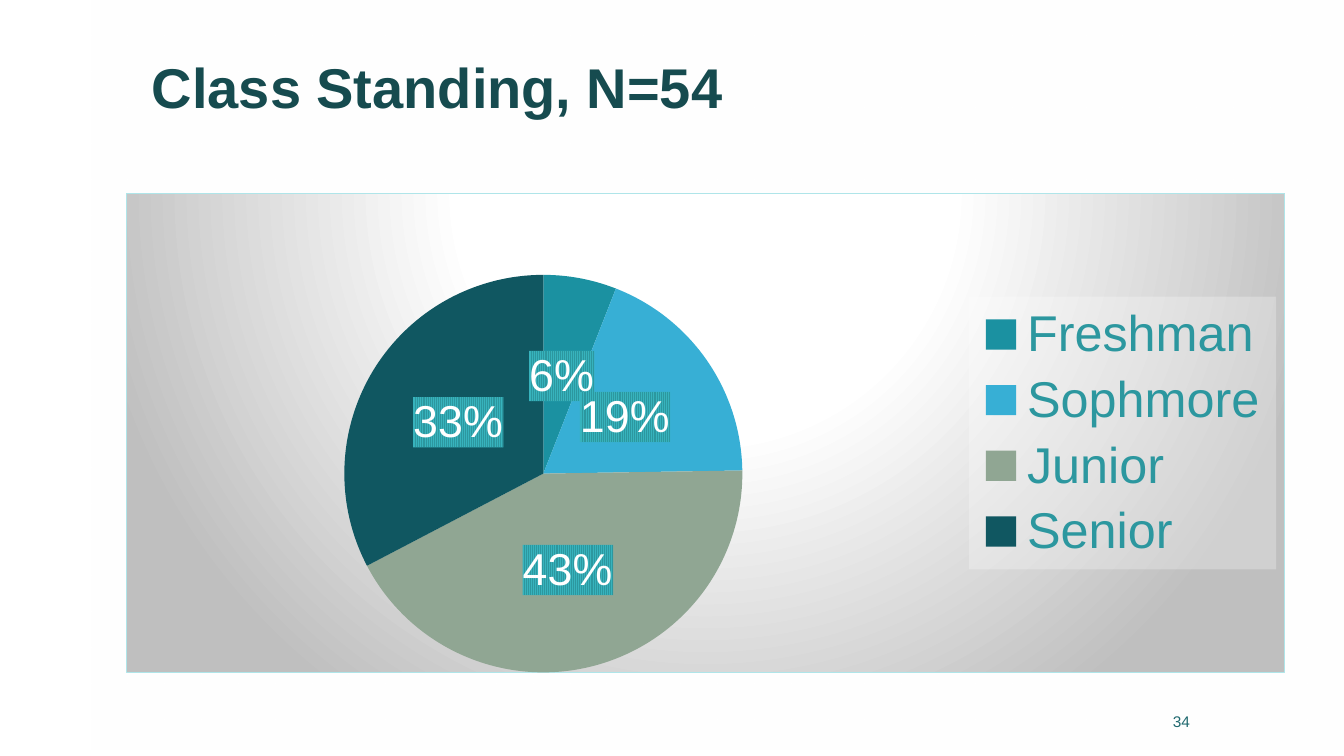
from lxml import etree
from pptx import Presentation
from pptx import util as u
from pptx.chart.data import CategoryChartData
from pptx.dml.color import RGBColor
from pptx.enum import chart as ch, shapes, text
from pptx.oxml import parse_xml
from pptx.oxml.ns import nsdecls, qn

PX = 914400 / 100.8
FONT = "Arial"
WHITE = RGBColor(0xFF, 0xFF, 0xFF)
SILVER = RGBColor(0xBF, 0xBF, 0xBF)
DARK_TEAL = RGBColor(0x16, 0x4B, 0x4F)
NUMBER_TEAL = RGBColor(0x1F, 0x69, 0x6F)
LEGEND_TEAL = RGBColor(0x2C, 0x97, 0x9F)
LABEL_DARK = RGBColor(0x2C, 0x97, 0x9F)
LABEL_LIGHT = RGBColor(0x37, 0xB3, 0xBD)
PALE_TEAL = RGBColor(0xAF, 0xE5, 0xE9)

STANDINGS = [
    ("Freshman", 6, RGBColor(0x1B, 0x91, 0xA1)),
    ("Sophmore", 19, RGBColor(0x37, 0xAF, 0xD5)),
    ("Junior", 43, RGBColor(0x90, 0xA6, 0x93)),
    ("Senior", 33, RGBColor(0x10, 0x57, 0x61)),
]


def px(n):
    return u.Emu(round(n * PX))


def color_xml(color, opacity=100):
    return f'<a:srgbClr val="{color}"><a:alpha val="{opacity * 1000}"/></a:srgbClr>'


def gradient_xml(stops, direction):
    """Stops are (position, colour, opacity), all in percent."""
    marks = "".join(f'<a:gs pos="{at * 1000}">{color_xml(color, opacity)}</a:gs>'
                    for at, color, opacity in stops)
    return f'<a:gradFill {nsdecls("a")}><a:gsLst>{marks}</a:gsLst>{direction}</a:gradFill>'


def set_format(target, values):
    for name, value in values.items():
        if name == "color":
            target.color.rgb = value
        else:
            setattr(target, name, value)


class Deck:
    def __init__(self, width, height):
        self.prs = Presentation()
        self.prs.slide_width, self.prs.slide_height = px(width), px(height)
        self.slide = self.prs.slides.add_slide(self.prs.slide_layouts[6])

    def font(self, target, size, color, bold=False):
        set_format(target, {"name": FONT, "size": u.Pt(size), "bold": bold, "color": color})

    def veil(self, box):
        """White rectangle that fades in opacity from top to bottom."""
        veil = self.slide.shapes.add_shape(shapes.MSO_SHAPE.RECTANGLE, *map(px, box))
        veil.shadow.inherit = False
        veil.line.fill.background()
        fade = gradient_xml([(0, WHITE, 60), (100, WHITE, 0)], '<a:lin ang="5400000" scaled="0"/>')
        veil._element.spPr.find(qn("a:prstGeom")).addnext(parse_xml(fade))

    def text(self, box, words, size, color, frame, paragraph, bold=False):
        text_frame = self.slide.shapes.add_textbox(*map(px, box)).text_frame
        set_format(text_frame, {"word_wrap": True, **frame})
        line = text_frame.paragraphs[0]
        set_format(line, paragraph)
        run = line.add_run()
        run.text = words
        self.font(run.font, size, color, bold)

    def backdrop(self, part, fill, line=""):
        """Give a chart part, whose font is already set, a fill and a border."""
        part.find(qn("c:txPr")).addprevious(
            parse_xml(f'<c:spPr {nsdecls("c", "a")}>{fill}{line}</c:spPr>'))

    def pie(self, box, rows, plot_box):
        data = CategoryChartData(number_format="General")
        data.categories = [name for name, _, _ in rows]
        data.add_series("Series 1", [value for _, value, _ in rows])
        chart = self.slide.shapes.add_chart(
            ch.XL_CHART_TYPE.PIE, *map(px, box), data).chart
        set_format(chart, {"has_title": False, "has_legend": True})
        self.font(chart.font, 10, DARK_TEAL)
        glow = gradient_xml(
            [(0, WHITE, 100), (39, WHITE, 100), (100, SILVER, 100)],
            '<a:path path="circle"><a:fillToRect l="50000" t="-80000" r="50000" b="180000"/></a:path>')
        border = f'<a:ln w="9525"><a:solidFill>{color_xml(PALE_TEAL)}</a:solidFill></a:ln>'
        self.backdrop(chart._chartSpace, glow, border)

        set_format(chart.legend, {"position": ch.XL_LEGEND_POSITION.RIGHT,
                                  "include_in_layout": False})
        self.font(chart.legend.font, 36, LEGEND_TEAL)
        self.backdrop(chart.legend._element,
                      f"<a:solidFill>{color_xml(WHITE, 27)}</a:solidFill>")

        plot = chart.plots[0]
        plot.vary_by_categories = True
        for i, (_, _, color) in enumerate(rows):
            slice_format = plot.series[0].points[i].format
            slice_format.fill.solid()
            slice_format.fill.fore_color.rgb = color
            slice_format.line.fill.background()
        plot.has_data_labels = True
        labels = plot.data_labels
        set_format(labels, {"show_percentage": True, "show_value": False,
                            "number_format": "0%", "number_format_is_linked": False,
                            "position": ch.XL_LABEL_POSITION.CENTER})
        self.font(labels.font, 32, WHITE)
        self.backdrop(labels._element,
                      f'<a:pattFill prst="narVert"><a:fgClr>{color_xml(LABEL_DARK)}</a:fgClr>'
                      f"<a:bgClr>{color_xml(LABEL_LIGHT)}</a:bgClr></a:pattFill>")
        self.place_plot(chart, plot_box)

    def place_plot(self, chart, plot_box):
        """Fix the inner plot area, given as fractions of the chart."""
        area = chart._chartSpace.find(f'{qn("c:chart")}/{qn("c:plotArea")}')
        for old in area.findall(qn("c:layout")):
            area.remove(old)
        layout = etree.Element(qn("c:layout"))
        manual = etree.SubElement(layout, qn("c:manualLayout"))
        settings = [("layoutTarget", "inner"), ("xMode", "edge"), ("yMode", "edge"),
                    *zip("xywh", plot_box)]
        for name, value in settings:
            etree.SubElement(manual, qn(f"c:{name}"), val=str(value))
        area.insert(0, layout)


def main():
    deck = Deck(1344, 756)
    deck.veil((92, 0, 1252, 756))
    deck.text((142, 0, 1058, 126), "Class Standing, N=54", 40, DARK_TEAL,
              {"vertical_anchor": text.MSO_ANCHOR.BOTTOM}, {"line_spacing": 0.9}, bold=True)
    deck.pie((126, 193, 1159, 480), STANDINGS, (0, 0.17, 0.72, 0.83))
    deck.text((887, 701, 313, 40), "34", 11, NUMBER_TEAL,
              {"vertical_anchor": text.MSO_ANCHOR.MIDDLE}, {"alignment": text.PP_ALIGN.RIGHT})
    deck.prs.save("out.pptx")


if __name__ == "__main__":
    main()
